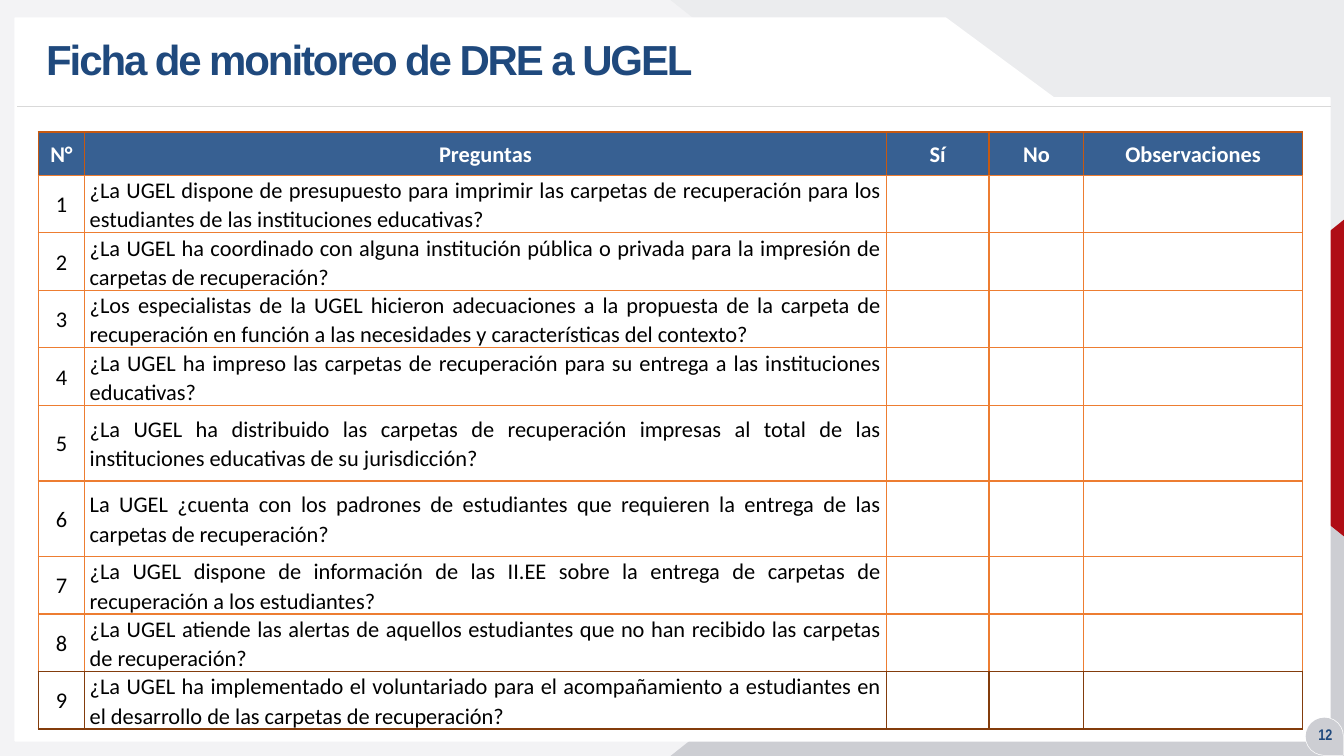
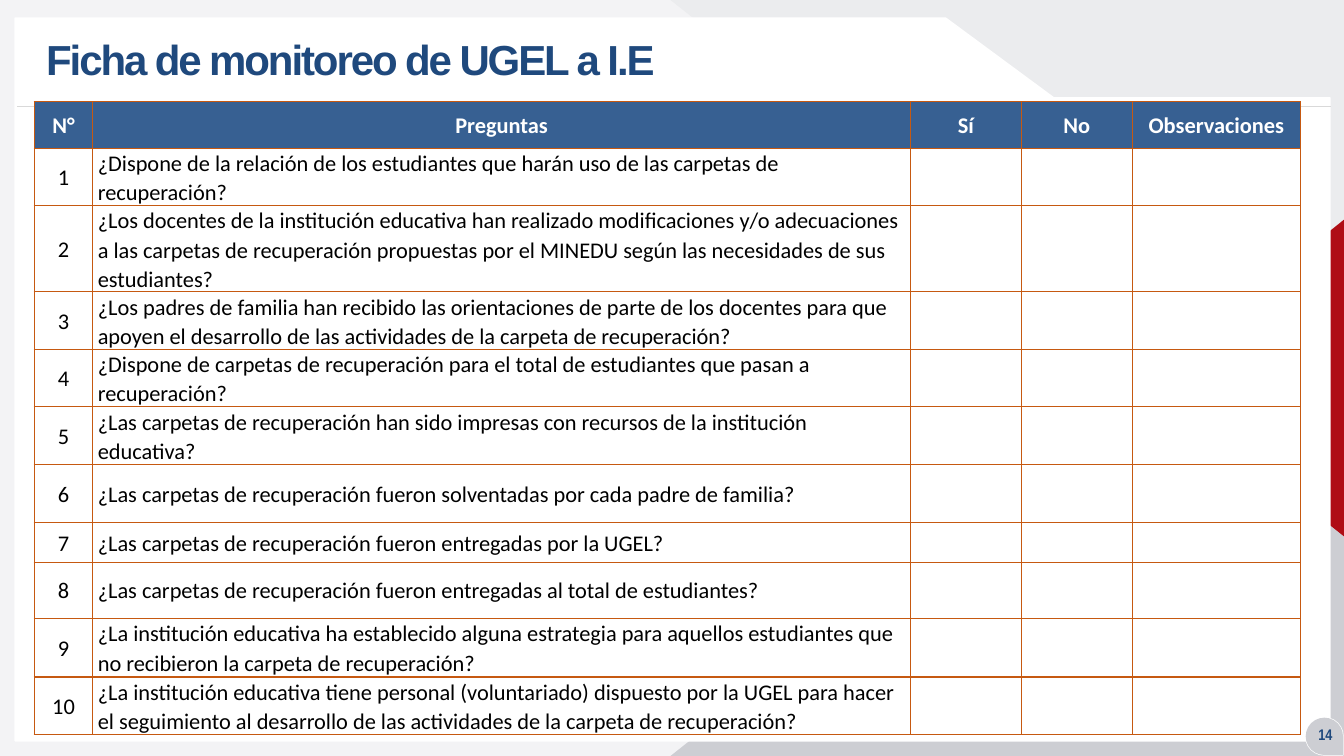
from lxml import etree
from pptx import Presentation
from pptx.dml.color import RGBColor
from pptx.enum.shapes import MSO_CONNECTOR as Connector, MSO_SHAPE as Shape
from pptx.enum.text import MSO_ANCHOR as Anchor, PP_ALIGN as Align
from pptx.oxml.ns import qn
from pptx.util import Inches, Pt

colour = RGBColor.from_string
NAVY, HEADER_BLUE, RED = "1F497D", "376092", "AF0D15"
BACKDROP, PALE_GREY, MID_GREY, RULE_GREY = "F3F3F5", "EBECEE", "CDCED3", "D9D9D9"
RUST, ORANGE, BROWN = "C65911", "ED7D31", "833C0C"
WHITE, BLACK = "FFFFFF", "000000"

HEADINGS = ["N°", "Preguntas", "Sí", "No", "Observaciones"]
PANEL = [(0.15, 0.18), (9.38, 0.18), (10.45, 0.97), (13.19, 0.97), (13.19, 7.35), (0.15, 7.35)]

# shape, position and size, rotation, point of the triangle, fill
BACKGROUND = [
    (Shape.RECTANGLE, (0, 0, 13.33, 7.5), 0, None, BACKDROP),
    (Shape.ISOSCELES_TRIANGLE, (6.65, 0, 6.69, 5.31), 180, 0, PALE_GREY),
    (Shape.ISOSCELES_TRIANGLE, (6.65, 2.19, 6.69, 5.31), 0, 1, MID_GREY),
    (Shape.ISOSCELES_TRIANGLE, (10.78, 2.77, 3.15, 1.96), 270, 0.5, RED),
]
BADGE = (Shape.TEAR, (12.95, 7.12, 0.37, 0.37), 90, None, MID_GREY)

FORMS = [
    {
        "title": "Ficha de monitoreo de DRE a UGEL",
        "number": "12",
        "corner": (0.38, 1.31),
        "widths": [0.46, 7.95, 1.02, 0.94, 2.17],
        "heights": [0.43, 0.53, 0.44, 0.53, 0.53, 0.75, 0.75, 0.56, 0.51, 0.56],
        "borders": [RUST] + [ORANGE] * 8 + [BROWN],
        "align": Align.JUSTIFY,
        "questions": [
            "¿La UGEL dispone de presupuesto para imprimir las carpetas de recuperación para los estudiantes de las instituciones educativas?",
            "¿La UGEL ha coordinado con alguna institución pública o privada para la impresión de carpetas de recuperación?",
            "¿Los especialistas de la UGEL hicieron adecuaciones a la propuesta de la carpeta de recuperación en función a las necesidades y características del contexto?",
            "¿La UGEL ha impreso las carpetas de recuperación para su entrega a las instituciones educativas?",
            "¿La UGEL ha distribuido las carpetas de recuperación impresas al total de las instituciones educativas de su jurisdicción?",
            "La UGEL ¿cuenta con los padrones de estudiantes que requieren la entrega de las carpetas de recuperación?",
            "¿La UGEL dispone de información de las II.EE sobre la entrega de carpetas de recuperación a los estudiantes?",
            "¿La UGEL atiende las alertas de aquellos estudiantes que no han recibido las carpetas de recuperación?",
            "¿La UGEL ha implementado el voluntariado para el acompañamiento a estudiantes en el desarrollo de las carpetas de recuperación?",
        ],
    },
    {
        "title": "Ficha de monitoreo de UGEL a I.E",
        "number": "14",
        "corner": (0.34, 1.01),
        "widths": [0.58, 8.11, 1.1, 1.1, 1.67],
        "heights": [0.46, 0.44, 0.79, 0.56, 0.56, 0.39, 0.58, 0.39, 0.56, 0.58, 0.56],
        "borders": [RUST] * 11,
        "align": Align.LEFT,
        "questions": [
            "¿Dispone de la relación de los estudiantes que harán uso de las carpetas de recuperación?",
            "¿Los docentes de la institución educativa han realizado modificaciones y/o adecuaciones a las carpetas de recuperación propuestas por el MINEDU según las necesidades de sus estudiantes?",
            "¿Los padres de familia han recibido las orientaciones de parte de los docentes para que apoyen el desarrollo de las actividades de la carpeta de recuperación?",
            "¿Dispone de carpetas de recuperación para el total de estudiantes que pasan a recuperación?",
            "¿Las carpetas de recuperación han sido impresas con recursos de la institución educativa?",
            "¿Las carpetas de recuperación fueron solventadas por cada padre de familia?",
            "¿Las carpetas de recuperación fueron entregadas por la UGEL?",
            "¿Las carpetas de recuperación fueron entregadas al total de estudiantes?",
            "¿La institución educativa ha establecido alguna estrategia para aquellos estudiantes que no recibieron la carpeta de recuperación?",
            "¿La institución educativa tiene personal (voluntariado) dispuesto por la UGEL para hacer el seguimiento al desarrollo de las actividades de la carpeta de recuperación?",
        ],
    },
]


def paint(shape, fill, line=None):
    """Give a shape a flat fill and a white-style 1 pt outline or none."""
    shape.shadow.inherit = False
    shape.fill.solid()
    shape.fill.fore_color.rgb = colour(fill)
    if line:
        shape.line.color.rgb = colour(line)
        shape.line.width = Pt(1)
    else:
        shape.line.fill.background()


def write(frame, text, font, size, ink, bold, align, spacing):
    """Fill the first paragraph of a text frame and return it."""
    para = frame.paragraphs[0]
    para.text = text
    para.alignment = align
    para.line_spacing = spacing
    para.font.name = font
    para.font.size = Pt(size)
    para.font.bold = bold
    para.font.color.rgb = colour(ink)
    return para


deck = Presentation()
deck.slide_width, deck.slide_height = Inches(13.33), Inches(7.5)

for form in FORMS:
    page = deck.slides.add_slide(deck.slide_layouts[6])

    for kind, place, rotation, point, fill in BACKGROUND + [BADGE]:
        shape = page.shapes.add_shape(kind, *map(Inches, place))
        shape.rotation = rotation
        if point is not None:
            shape.adjustments[0] = point
        paint(shape, fill, WHITE if kind == Shape.TEAR else None)

    corners = [(Inches(x), Inches(y)) for x, y in PANEL]
    outline = page.shapes.build_freeform(*corners[0])
    outline.add_line_segments(corners[1:], close=True)
    paint(outline.convert_to_shape(), WHITE, WHITE)

    rule = page.shapes.add_connector(
        Connector.STRAIGHT, Inches(0.17), Inches(1.06), Inches(13.2), Inches(1.06))
    rule.line.color.rgb = colour(RULE_GREY)
    rule.line.width = Pt(0.5)
    etree.SubElement(rule._element.spPr, qn("a:effectLst"))

    kind, place, rotation, _, fill = BADGE
    badge = page.shapes.add_shape(kind, *map(Inches, place))
    badge.rotation = rotation
    paint(badge, fill)

    labels = [
        (form["title"], (0.36, 0.22, 9.06, 0.79), "Arial", 30, Align.LEFT, 0.9, -150),
        (form["number"], (12.93, 7.19, 0.43, 0.2), "Arial Narrow", 11, Align.CENTER, 1.0, 0),
    ]
    for text, place, font, size, align, spacing, tracking in labels:
        box = page.shapes.add_textbox(*map(Inches, place))
        box.text_frame.word_wrap = True
        box.text_frame.vertical_anchor = Anchor.MIDDLE
        para = write(box.text_frame, text, font, size, NAVY, True, align, spacing)
        if tracking:
            para.runs[0]._r.get_or_add_rPr().set("spc", str(tracking))

    widths, heights, borders = form["widths"], form["heights"], form["borders"]
    rows = [HEADINGS] + [
        [str(number), question, "", "", ""]
        for number, question in enumerate(form["questions"], 1)
    ]
    left, top = form["corner"]
    table = page.shapes.add_table(
        len(rows), len(HEADINGS), Inches(left), Inches(top),
        Inches(sum(widths)), Inches(sum(heights))).table
    table.horz_banding = False
    for column, width in zip(table.columns, widths):
        column.width = Inches(width)

    for r, texts in enumerate(rows):
        table.rows[r].height = Inches(heights[r])
        below = borders[min(r + 1, len(rows) - 1)]
        is_header = r == 0
        for c, text in enumerate(texts):
            cell = table.cell(r, c)
            cell.margin_left = cell.margin_right = Inches(0.05)
            cell.margin_top = cell.margin_bottom = 0
            cell.vertical_anchor = Anchor.MIDDLE
            properties = cell._tc.get_or_add_tcPr()
            for side in "LRTB":
                edge = etree.SubElement(properties, qn("a:ln" + side), w=str(Pt(1)))
                solid = etree.SubElement(edge, qn("a:solidFill"))
                etree.SubElement(solid, qn("a:srgbClr"), val=below if side == "B" else borders[r])
            if is_header:
                cell.fill.solid()
                cell.fill.fore_color.rgb = colour(HEADER_BLUE)
            else:
                cell.fill.background()
            if text:
                align = form["align"] if c == 1 and not is_header else Align.CENTER
                write(cell.text_frame, text, "Calibri", 16,
                      WHITE if is_header else BLACK, is_header, align, 1.07)

deck.save("out.pptx")
